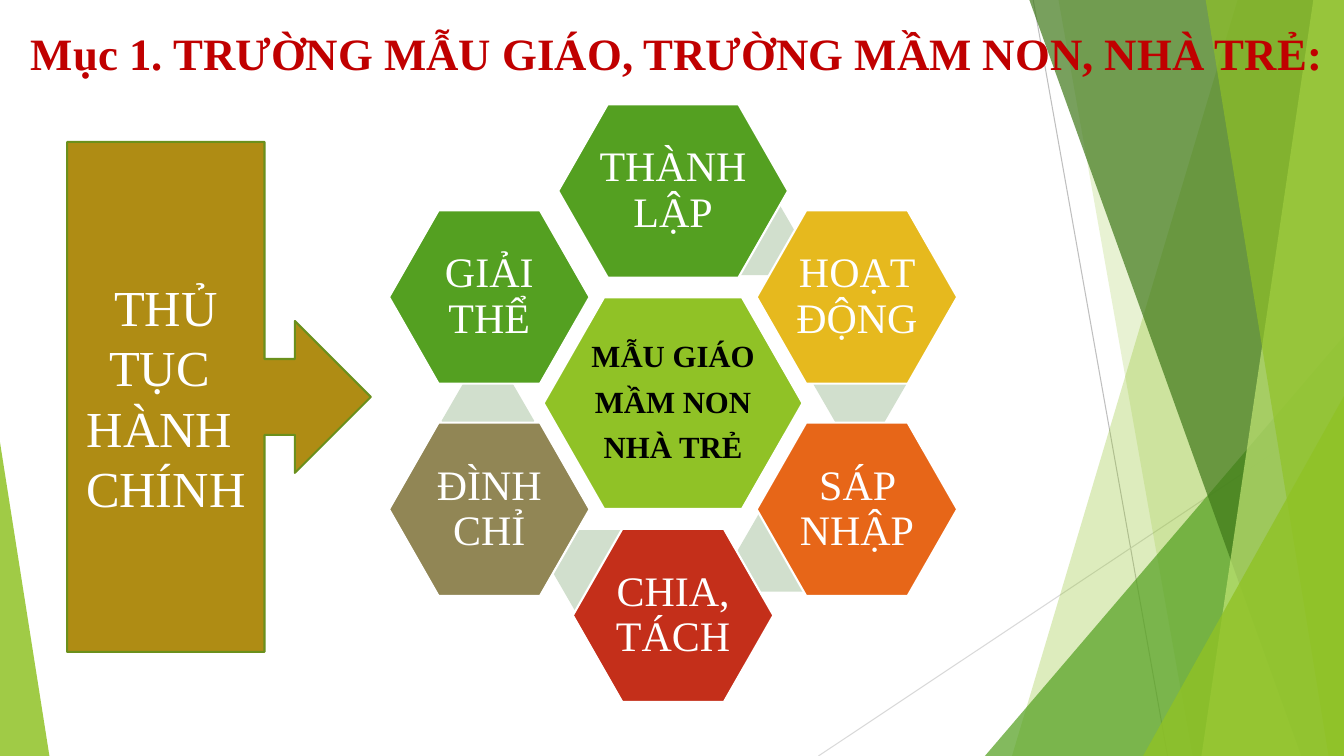
"""Builds the slide on administrative procedures for preschools."""
from math import cos, radians, sin

from lxml.etree import SubElement
from pptx import Presentation
from pptx.dml.color import RGBColor
from pptx.enum.shapes import MSO_CONNECTOR, MSO_SHAPE as SHAPE
from pptx.enum.text import MSO_ANCHOR as ANCHOR, PP_ALIGN as ALIGN
from pptx.oxml.ns import qn
from pptx.util import Pt

W, H = 960, 540
BLEED = -0.6
LIME, GREEN, WHITE = "90C226", "54A021", "FFFFFF"


def rgb(value):
    return RGBColor.from_string(value)


class Deck:
    """Holds the text style and the current slide."""

    font = "Times New Roman"

    def __init__(self, slide):
        self.shapes = slide.shapes

    def paint(self, s, fill, alpha=None, line=None):
        s.shadow.inherit = False
        s.fill.solid()
        s.fill.fore_color.rgb = rgb(fill)
        if alpha is not None:
            color = s.element.spPr.find(qn("a:solidFill")).find(qn("a:srgbClr"))
            SubElement(color, qn("a:alpha")).set("val", str(alpha * 1000))
        if line:
            s.line.color.rgb = rgb(line)
            s.line.width = Pt(1.5)
        else:
            s.line.fill.background()
        return s

    def shape(self, kind, x, y, w, h, fill, adj=None, **look):
        s = self.shapes.add_shape(kind, Pt(x), Pt(y), Pt(w), Pt(h))
        if adj is not None:
            s.adjustments[0] = adj
        return self.paint(s, fill, **look)

    def hexagon(self, cx, cy, w, h, fill, adj=0.286, **look):
        return self.shape(SHAPE.HEXAGON, cx - w / 2, cy - h / 2, w, h, fill, adj, **look)

    def band(self, top_x, bottom_x, fill, alpha):
        builder = self.shapes.build_freeform(Pt(top_x), Pt(BLEED))
        corners = [(W, BLEED), (W, H), (bottom_x, H)]
        builder.add_line_segments([(Pt(x), Pt(y)) for x, y in corners], close=True)
        return self.paint(builder.convert_to_shape(), fill, alpha)

    def line(self, x1, y1, x2, y2, color):
        c = self.shapes.add_connector(MSO_CONNECTOR.STRAIGHT, Pt(x1), Pt(y1), Pt(x2), Pt(y2))
        c.line.color.rgb = rgb(color)
        c.line.width = Pt(0.75)
        SubElement(c.element.spPr, qn("a:effectLst"))

    def textbox(self, x, y, w, h, text, **style):
        s = self.shapes.add_textbox(Pt(x), Pt(y), Pt(w), Pt(h))
        self.label(s, text, **style)

    def label(self, s, text, size, color=WHITE, bold=False, align=ALIGN.CENTER,
              anchor=ANCHOR.MIDDLE, inset=None, spacing=None, after=None):
        tf = s.text_frame
        tf.word_wrap = True
        tf.vertical_anchor = anchor
        if inset is not None:
            tf.margin_left = tf.margin_right = tf.margin_top = tf.margin_bottom = Pt(inset)
        for i, words in enumerate(text.split("\n")):
            p = tf.paragraphs[0] if i == 0 else tf.add_paragraph()
            p.alignment = align
            if spacing:
                p.line_spacing = spacing
            if after:
                p.space_after = Pt(after)
            r = p.add_run()
            r.text = words
            r.font.name, r.font.size, r.font.bold = self.font, Pt(size), bold
            r.font.color.rgb = rgb(color)


def draw_backdrop(deck):
    deck.line(738, 0, 834, H, "BFBFBF")
    deck.line(W, 290, 584.6, H, "D9D9D9")
    deck.band(884.2, 722.9, LIME, 30)
    deck.band(756, 851.8, LIME, 20)
    deck.shape(SHAPE.ISOSCELES_TRIANGLE, 703.5, 240, 256.5, 300, GREEN, 1, alpha=72)
    deck.band(735.1, 929.5, "3F7819", 70)
    deck.band(938.2, 858.2, "C0E474", 70)
    deck.band(861.1, 949, LIME, 65)
    deck.shape(SHAPE.ISOSCELES_TRIANGLE, 816.5, 283, 143.5, 257, LIME, 1, alpha=80)
    deck.shape(SHAPE.ISOSCELES_TRIANGLE, 0, 316, 35.3, 224, LIME, 0, alpha=85)


def draw_ring(deck):
    cx, cy, radius = 480.8, 288, 151.6
    core = deck.hexagon(cx, cy, 185, 151.2, LIME, line=WHITE)
    deck.label(core, "MẪU GIÁO\nMẦM NON\nNHÀ TRẺ", 22, "000000", bold=True,
               inset=2.2, spacing=0.9, after=8.6)
    steps = [
        ("THÀNH LẬP", GREEN, 164.2, (536.4, 168.1)),
        ("HOẠT ĐỘNG", "E6B91E", 143.3, (614.2, 274.7)),
        ("SÁP NHẬP", "E76618", 143.3, (559.4, 394.2)),
        ("CHIA, TÁCH", "C42F1A", 143.3, (427, 407.2)),
        ("ĐÌNH CHỈ", "918655", 143.3, (348.5, 300.6)),
        ("GIẢI THỂ", GREEN, 143.3, None),
    ]
    for i, (name, fill, width, link) in enumerate(steps):
        if link:
            deck.hexagon(*link, 66.2, 56.9, "D1DFCD", adj=0.289)
        angle = radians(60 * i - 90)
        step = deck.hexagon(cx + radius * cos(angle), cy + radius * sin(angle),
                            width, 123.8, fill, line=WHITE)
        deck.label(step, name, 30, inset=2.9, spacing=0.9, after=11.7)


def main():
    prs = Presentation()
    prs.slide_width, prs.slide_height = Pt(W), Pt(H)
    deck = Deck(prs.slides.add_slide(prs.slide_layouts[6]))
    draw_backdrop(deck)
    deck.textbox(15, 15, 945, 45.4, "Mục 1. TRƯỜNG MẪU GIÁO, TRƯỜNG MẦM NON, NHÀ TRẺ:",
                 size=32, color="C00000", bold=True, align=ALIGN.LEFT, anchor=ANCHOR.TOP)
    draw_ring(deck)
    callout = deck.shape(SHAPE.RIGHT_ARROW_CALLOUT, 48, 101.4, 216.9, 364.3, "AF8C14",
                         line="6B901C")
    deck.label(callout, "THỦ\nTỤC \nHÀNH \nCHÍNH", 36)
    prs.save("out.pptx")


if __name__ == "__main__":
    main()
